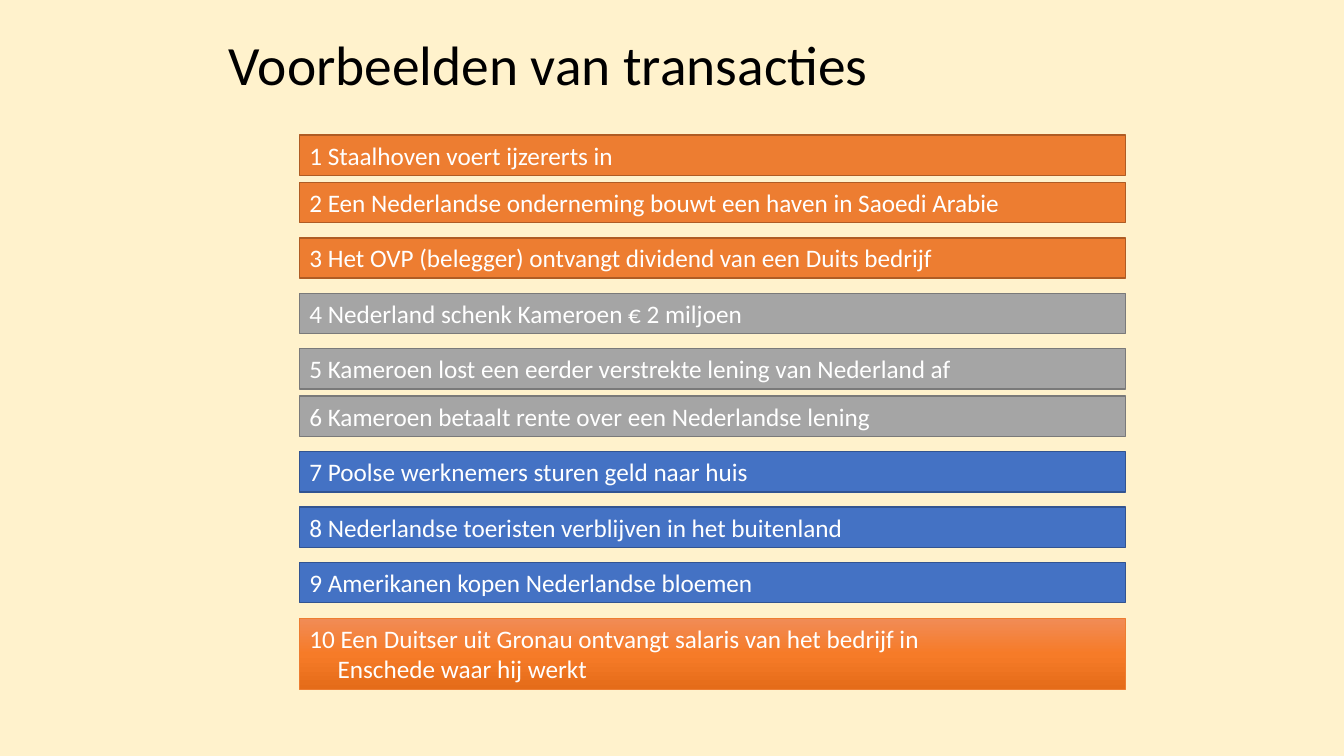
from copy import deepcopy
from dataclasses import dataclass

from pptx import Presentation
from pptx.dml.color import RGBColor as RGB
from pptx.enum.shapes import MSO_SHAPE as SHAPE
from pptx.enum.text import MSO_ANCHOR as ANCHOR, MSO_AUTO_SIZE as AUTOSIZE, PP_ALIGN as ALIGN
from pptx.oxml.ns import qn
from pptx.util import Inches, Pt

COLORS = {
    "background": "FFF2CC", "title": "000000", "text": "FFFFFF",
    "orange": "ED7D31", "orange_line": "AF5C24",
    "gray": "A5A5A5", "gray_line": "7A7A7A",
    "blue": "4472C4", "blue_line": "325491",
    "glow_top": "F18C57", "glow_middle": "F67B28", "glow_bottom": "E56C19",
}
LEFT, TOP, WIDTH = 2.97, 1.34, 8.19
BAR_HEIGHT, TALL_HEIGHT = 0.4, 0.71
GAP, TIGHT_GAP = 0.15, 0.07
INDENT = 0.28


@dataclass
class Bar:
    lines: list[str]
    color: str
    gap_after: float = GAP
    height: float = BAR_HEIGHT
    glossy: bool = False


BARS = [
    Bar(["1 Staalhoven voert ijzererts in"], "orange", TIGHT_GAP),
    Bar(["2 Een Nederlandse onderneming bouwt een haven in Saoedi Arabie"], "orange"),
    Bar(["3 Het OVP (belegger) ontvangt dividend van een Duits bedrijf"], "orange"),
    Bar(["4 Nederland schenk Kameroen € 2 miljoen"], "gray"),
    Bar(["5 Kameroen lost een eerder verstrekte lening van Nederland af"], "gray", TIGHT_GAP),
    Bar(["6 Kameroen betaalt rente over een Nederlandse lening"], "gray"),
    Bar(["7 Poolse werknemers sturen geld naar huis"], "blue"),
    Bar(["8 Nederlandse toeristen verblijven in het buitenland"], "blue"),
    Bar(["9 Amerikanen kopen Nederlandse bloemen"], "blue"),
    Bar(["10 Een Duitser uit Gronau ontvangt salaris van het bedrijf in",
         "Enschede waar hij werkt"], "orange", height=TALL_HEIGHT, glossy=True),
]


def rgb(name: str) -> RGB:
    return RGB.from_string(COLORS[name])


def apply(target, values: dict) -> None:
    for name, value in values.items():
        setattr(target, name, value)


def format_font(p, size: float, color: str) -> None:
    for r in p.runs:
        apply(r.font, {"name": "Calibri", "size": Pt(size)})
        r.font.color.rgb = rgb(color)


def fill_glossy(sp) -> None:
    """Fill from top to bottom through three colours."""
    sp.fill.gradient()
    sp.fill.gradient_angle = 270
    first = sp._element.spPr.find(f".//{qn('a:gs')}")
    first.addnext(deepcopy(first))
    names = ("glow_top", "glow_middle", "glow_bottom")
    for i, (stop, name) in enumerate(zip(sp.fill.gradient_stops, names)):
        stop.position = i / 2
        stop.color.rgb = rgb(name)


def add_title(slide, text: str) -> None:
    sp = slide.shapes.title
    apply(sp, {"left": Inches(2.17), "top": Inches(0.39),
               "width": Inches(9), "height": Inches(0.63)})
    tf = sp.text_frame
    tf.text = text
    apply(tf, {"word_wrap": True, "auto_size": AUTOSIZE.NONE, "vertical_anchor": ANCHOR.MIDDLE})
    p = tf.paragraphs[0]
    apply(p, {"alignment": ALIGN.LEFT, "line_spacing": 0.7})
    format_font(p, 39.6, "title")


def add_bar(slide, bar: Bar, top: float) -> None:
    sp = slide.shapes.add_shape(SHAPE.RECTANGLE, Inches(LEFT), Inches(top),
                                Inches(WIDTH), Inches(bar.height))
    sp.shadow.inherit = False
    if bar.glossy:
        fill_glossy(sp)
    else:
        sp.fill.solid()
        sp.fill.fore_color.rgb = rgb(bar.color)
    sp.line.color.rgb = rgb(bar.color if bar.glossy else f"{bar.color}_line")
    sp.line.width = Pt(0.5 if bar.glossy else 1)

    tf = sp.text_frame
    tf.text = "\n".join(bar.lines)
    apply(tf, {"word_wrap": True, "auto_size": AUTOSIZE.SHAPE_TO_FIT_TEXT,
               "vertical_anchor": ANCHOR.TOP})
    for i, p in enumerate(tf.paragraphs):
        p.alignment = ALIGN.LEFT
        if i:  # continuation line
            p._p.get_or_add_pPr().set("marL", str(Inches(INDENT)))
        format_font(p, 18, "text")


def main() -> None:
    prs = Presentation()
    apply(prs, {"slide_width": Inches(13.33), "slide_height": Inches(7.5)})
    slide = prs.slides.add_slide(prs.slide_layouts[5])
    slide.background.fill.solid()
    slide.background.fill.fore_color.rgb = rgb("background")

    add_title(slide, "Voorbeelden van transacties")

    # Transactions, stacked from top to bottom
    top = TOP
    for bar in BARS:
        add_bar(slide, bar, top)
        top += bar.height + bar.gap_after

    prs.save("out.pptx")


if __name__ == "__main__":
    main()
